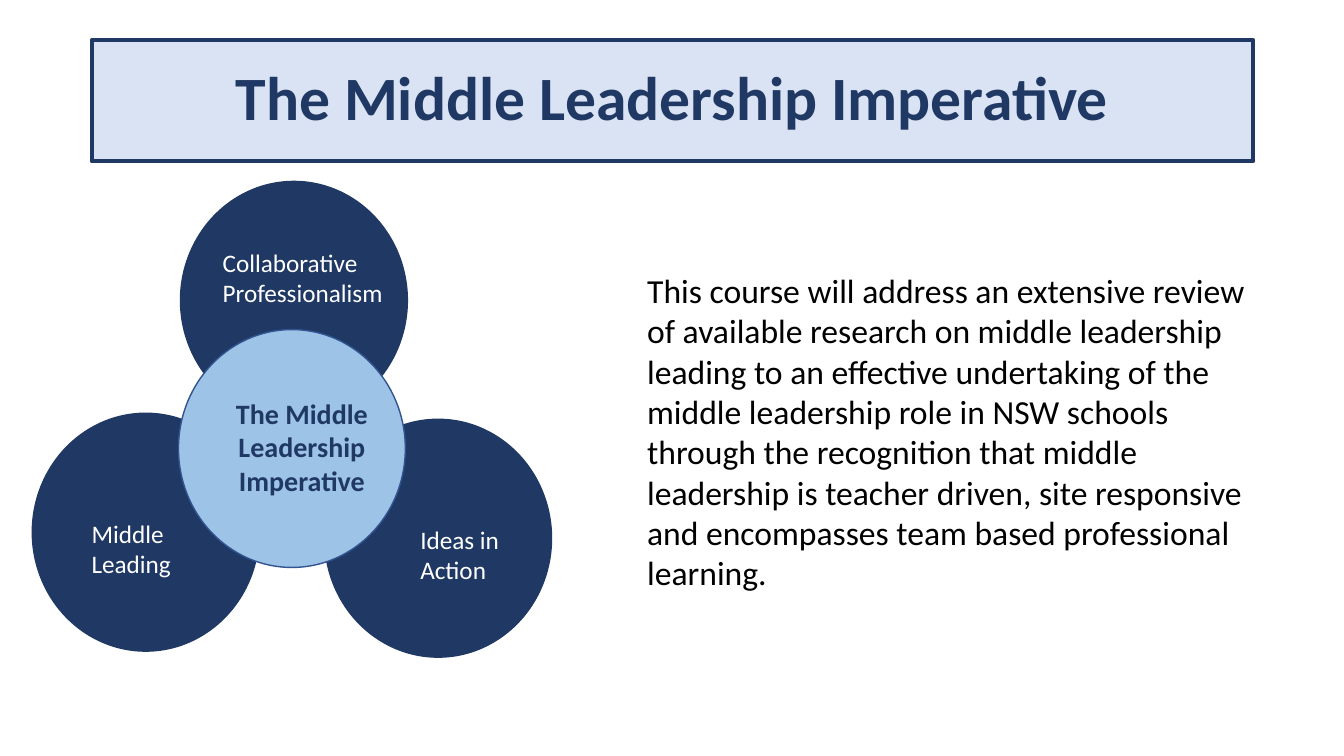
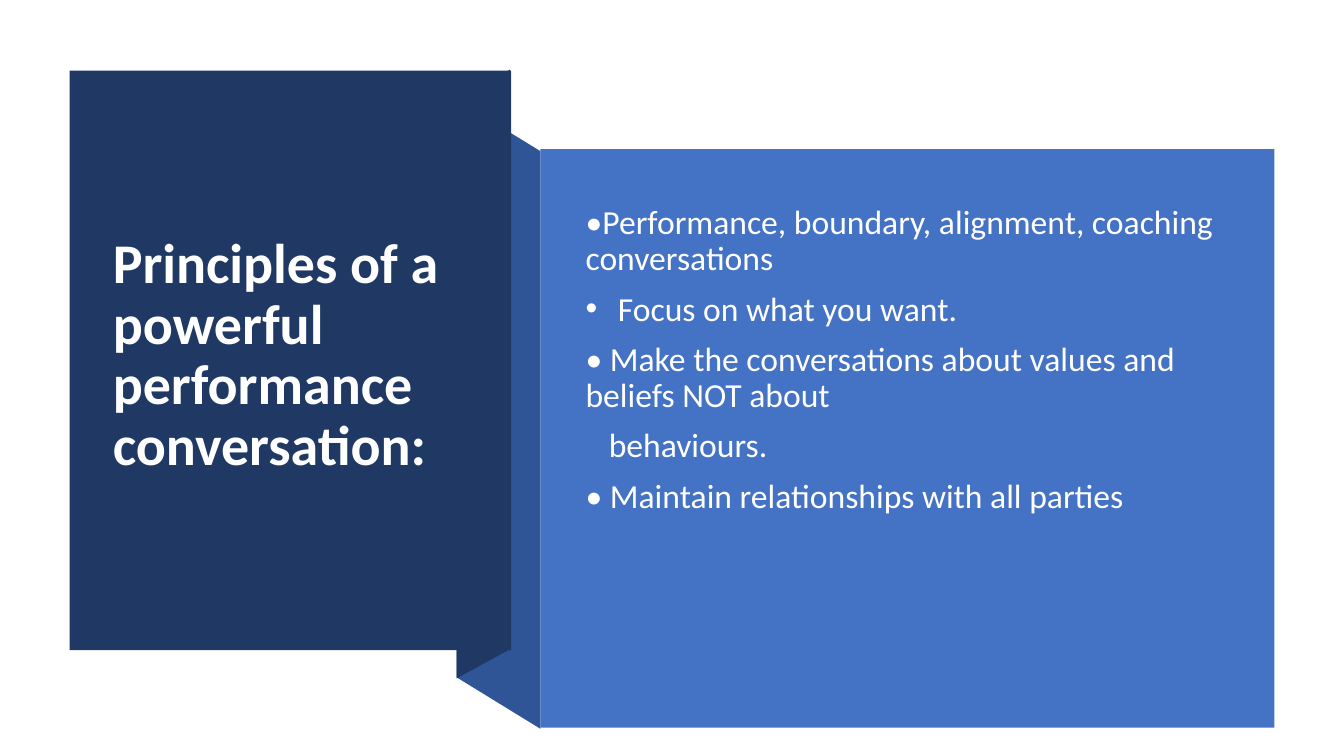
from dataclasses import dataclass

from lxml import etree
from pptx import Presentation
from pptx.dml.color import RGBColor
from pptx.enum import shapes, text
from pptx.oxml import ns
from pptx.util import Inches, Pt


@dataclass(frozen=True)
class Theme:
    """Colours, type sizes and font shared by the slides."""
    font: str = "Calibri"
    navy: str = "203864"
    fold: str = "2F5597"
    blue: str = "4472C4"
    sky: str = "9DC3E6"
    sky_edge: str = "325491"
    pale: str = "DAE3F3"
    white: str = "FFFFFF"
    black: str = "000000"
    banner_size: int = 44
    heading_size: int = 40
    body_size: int = 24
    hub_size: int = 20
    label_size: int = 18
    tight: float = 0.9


THEME = Theme()
CIRCLE_SIZE = (2.25, 2.36)


def rgb(value):
    """Turn a hex string into a colour."""
    return RGBColor.from_string(value)


def paint(shape, fill, line=None, width=1):
    """Give a shape its fill and outline, without a shadow."""
    shape.shadow.inherit = False
    shape.fill.solid()
    shape.fill.fore_color.rgb = rgb(fill)
    if line:
        shape.line.color.rgb = rgb(line)
        shape.line.width = Pt(width)
    else:
        shape.line.fill.background()
    return shape


def add_block(slide, kind, box, fill, line=None, width=1):
    """Add a painted preset shape."""
    shape = slide.shapes.add_shape(kind, *map(Inches, box))
    return paint(shape, fill, line, width)


def add_polygon(slide, points, fill):
    """Add a closed painted outline through points in inches."""
    start, *corners = [(Inches(x), Inches(y)) for x, y in points]
    builder = slide.shapes.build_freeform(*start)
    builder.add_line_segments(corners, close=True)
    return paint(builder.convert_to_shape(), fill)


def style(paragraph, size, color, bold=False, align=text.PP_ALIGN.LEFT, spacing=1.0):
    """Set the type and alignment of a paragraph."""
    font = paragraph.font
    font.name, font.size, font.bold = THEME.font, Pt(size), bold
    font.color.rgb = rgb(color)
    paragraph.alignment = align
    paragraph.line_spacing = spacing


def add_text(slide, box, words, size, color, anchor=text.MSO_ANCHOR.TOP, **options):
    """Add a wrapping text box with one paragraph per string."""
    frame = slide.shapes.add_textbox(*map(Inches, box)).text_frame
    frame.word_wrap = True
    frame.vertical_anchor = anchor
    frame.text = "\n".join(words)
    for paragraph in frame.paragraphs:
        style(paragraph, size, color, **options)
    return frame


def indent(paragraph, margin, bullet=None):
    """Indent a paragraph, hanging an optional bullet in the margin."""
    properties = paragraph._p.get_or_add_pPr()
    properties.set("marL", str(Inches(margin)))
    if bullet:
        properties.set("indent", str(-Inches(margin)))
        etree.SubElement(properties, ns.qn("a:buFont")).set("typeface", "Arial")
        etree.SubElement(properties, ns.qn("a:buChar")).set("char", bullet)
        defaults = properties.find(ns.qn("a:defRPr"))
        properties.append(defaults)


def add_banner(slide, words):
    """Add the framed title across the top."""
    banner = add_block(slide, shapes.MSO_SHAPE.RECTANGLE, (0.91, 0.4, 11.52, 1.2),
                       THEME.pale, THEME.navy, 3)
    banner.text_frame.text = words
    banner.text_frame.word_wrap = True
    banner.text_frame.vertical_anchor = text.MSO_ANCHOR.MIDDLE
    style(banner.text_frame.paragraphs[0], THEME.banner_size, THEME.navy, True,
          text.PP_ALIGN.CENTER, THEME.tight)


def add_circle(slide, left, top, fill, line):
    """Add one circle of the cluster."""
    add_block(slide, shapes.MSO_SHAPE.FLOWCHART_CONNECTOR,
              (left, top, *CIRCLE_SIZE), fill, line)


def build_imperative(slide):
    """Build the circle cluster with the course description."""
    add_banner(slide, "The Middle Leadership Imperative")
    petals = [
        ("Middle Leading", (0.32, 4.1), (0.81, 5.09, 1.4, 0.71)),
        ("Ideas in Action", (3.22, 4.16), (4.07, 5.15, 1.4, 0.71)),
        ("Collaborative Professionalism", (1.79, 1.8), (2.11, 2.4, 1.91, 0.71)),
    ]
    for _, corner, _ in petals:
        add_circle(slide, *corner, THEME.navy, THEME.navy)
    add_circle(slide, 1.77, 3.27, THEME.sky, THEME.sky_edge)
    add_text(slide, (2.21, 3.88, 1.57, 1.11), ["The Middle Leadership Imperative"],
             THEME.hub_size, THEME.navy, bold=True, align=text.PP_ALIGN.CENTER)
    for label, _, box in petals:
        add_text(slide, box, [label], THEME.label_size, THEME.white)
    add_text(slide, (6.32, 2.63, 6.39, 3.33), [
        "This course will address an extensive review of available research on "
        "middle leadership leading to an effective undertaking of the middle "
        "leadership role in NSW schools through the recognition that middle "
        "leadership is teacher driven, site responsive and encompasses team "
        "based professional learning."], THEME.body_size, THEME.black)


def build_principles(slide):
    """Build the folded ribbon with the heading and its principles."""
    add_polygon(slide, [(5.36, 7.23), (4.53, 6.72), (4.53, 0.99), (5.36, 1.5)], THEME.fold)
    add_polygon(slide, [(5.06, 6.44), (4.53, 6.73), (4.53, 0.98), (5.06, 0.69)], THEME.navy)
    rectangle = shapes.MSO_SHAPE.RECTANGLE
    add_block(slide, rectangle, (0.69, 0.7, 4.38, 5.75), THEME.navy)
    add_text(slide, (1.02, 1.04, 3.71, 4.99),
             ["Principles of a powerful performance conversation:"],
             THEME.heading_size, THEME.white, text.MSO_ANCHOR.MIDDLE,
             bold=True, spacing=THEME.tight)
    add_block(slide, rectangle, (5.36, 1.48, 7.28, 5.74), THEME.blue)
    principles = add_text(slide, (5.71, 1.99, 6.51, 4.63), [
        "•Performance, boundary, alignment, coaching conversations",
        "Focus on what you want.",
        "• Make the conversations about values and beliefs NOT about",
        "behaviours.",
        "• Maintain relationships with all parties",
    ], THEME.body_size, THEME.white, spacing=THEME.tight).paragraphs
    for paragraph in principles:
        paragraph.space_after = Pt(10)
    indent(principles[1], 0.32, "•")
    indent(principles[3], 0.23)


def main():
    """Build and save the presentation."""
    presentation = Presentation()
    presentation.slide_width, presentation.slide_height = Inches(13.33), Inches(7.5)
    blank = presentation.slide_layouts[6]
    for build in (build_imperative, build_principles):
        build(presentation.slides.add_slide(blank))
    presentation.save("out.pptx")


if __name__ == "__main__":
    main()
